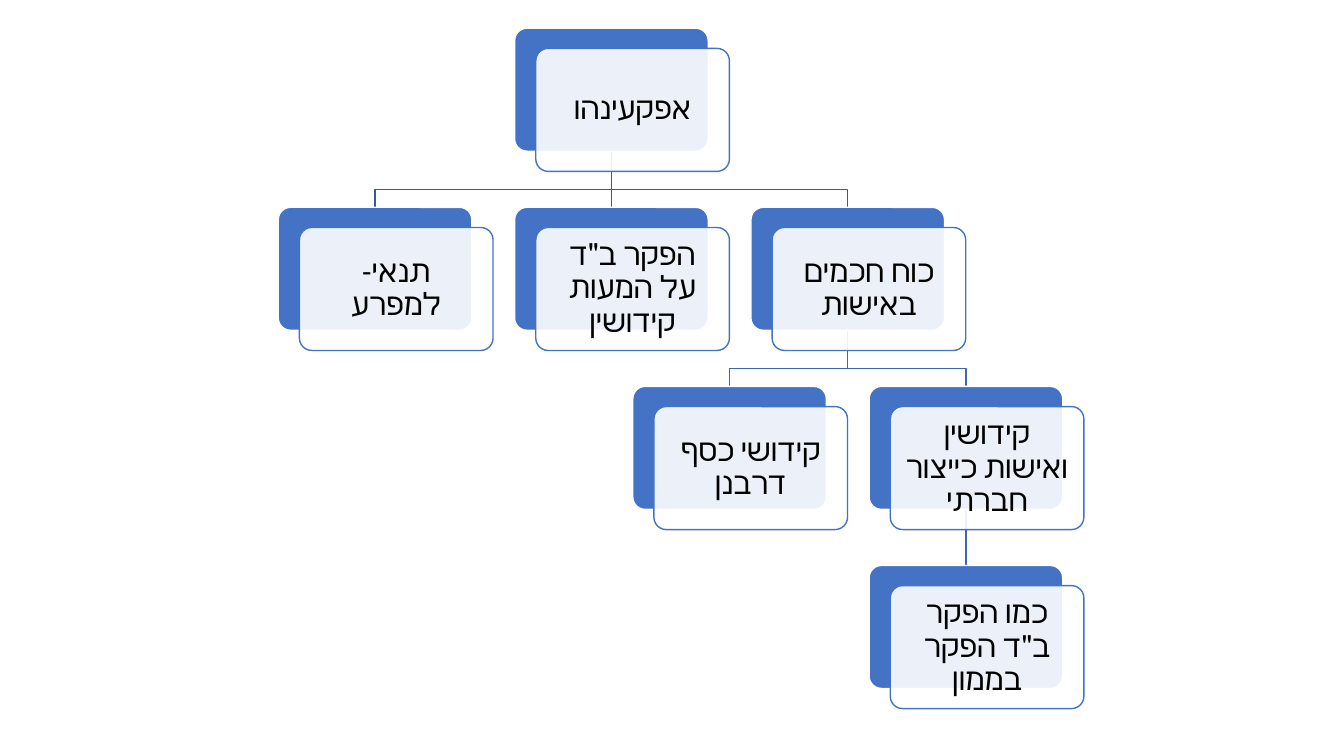
from dataclasses import dataclass

from lxml.etree import SubElement
from pptx import Presentation
from pptx.dml.color import RGBColor
from pptx.enum.shapes import MSO_CONNECTOR as Connector, MSO_SHAPE as Shape
from pptx.enum.text import MSO_ANCHOR as Anchor, PP_ALIGN as Align
from pptx.oxml.ns import qn
from pptx.util import Inches, Pt


@dataclass(frozen=True)
class Theme:
    """Colours, type and line sizes of the slide."""
    accent: str = "4472C4"
    paper: str = "FFFFFF"
    ink: str = "000000"
    links: tuple = ("365B9D", "3E67B2", "3E67B2")
    font: str = "Calibri"
    size: int = 22
    line: int = 1
    opacity: int = 90


@dataclass(frozen=True)
class Node:
    """One card: its wording, grid place and parent."""
    text: str
    column: int
    row: int
    parent: str = ""


THEME = Theme()
CARD_WIDTH, CARD_HEIGHT = 1.92, 1.22
SHIFT_X, SHIFT_Y = 0.21, 0.2
BEND = 0.68
TREE_BOX = (2.76, 0.28, 7.99, 6.75)
COLUMN_STEPS, ROW_STEPS = 5, 3
TREE = {
    "root": Node("אפקעינהו", 2, 0),
    "condition": Node("תנאי- למפרע", 0, 1, "root"),
    "money": Node("הפקר ב״ד על המעות קידושין", 2, 1, "root"),
    "sages": Node("כוח חכמים באישות", 4, 1, "root"),
    "silver": Node("קידושי כסף דרבנן", 3, 2, "sages"),
    "social": Node("קידושין ואישות כייצור חברתי", 5, 2, "sages"),
    "property": Node("כמו הפקר ב״ד הפקר בממון", 5, 3, "social"),
}


def color(code):
    """Turn a hex code into a colour."""
    return RGBColor.from_string(code)


def style_line(line, code):
    """Give a line its colour and width."""
    line.color.rgb = color(code)
    line.width = Pt(THEME.line)


def add_panel(slide, left, top, fill, border):
    """Draw one rounded panel of a card."""
    panel = slide.shapes.add_shape(
        Shape.ROUNDED_RECTANGLE, Inches(left), Inches(top),
        Inches(CARD_WIDTH), Inches(CARD_HEIGHT))
    panel.adjustments[0] = 0.1
    panel.shadow.inherit = False
    panel.fill.solid()
    panel.fill.fore_color.rgb = color(fill)
    style_line(panel.line, border)
    return panel


def write_label(panel, text):
    """Write centred right-to-left text in a panel."""
    frame = panel.text_frame
    inset = Inches(0.12)
    layout = {"word_wrap": True, "vertical_anchor": Anchor.MIDDLE,
              "margin_left": inset, "margin_right": inset,
              "margin_top": inset, "margin_bottom": inset}
    for name, value in layout.items():
        setattr(frame, name, value)
    label = frame.paragraphs[0]
    label.alignment = Align.CENTER
    label.line_spacing = 0.9
    label._p.get_or_add_pPr().set("rtl", "1")
    words = label.add_run()
    words.text = text
    words.font.name = THEME.font
    words.font.size = Pt(THEME.size)
    words.font.color.rgb = color(THEME.ink)
    SubElement(words.font._element, qn("a:cs")).set("typeface", THEME.font)


def add_card(slide, left, top, text):
    """Draw a solid panel with a translucent labelled one over it."""
    add_panel(slide, left, top, THEME.accent, THEME.paper)
    front = add_panel(slide, left + SHIFT_X, top + SHIFT_Y, THEME.paper, THEME.accent)
    tint = front.fill._xPr.find(qn("a:solidFill"))[0]
    SubElement(tint, qn("a:alpha")).set("val", str(THEME.opacity * 1000))
    write_label(front, text)


def add_link(slide, parent, child, code):
    """Join the bottom of a parent card to the top of its child."""
    start_x, end_x = (Inches(left + CARD_WIDTH / 2) for left, top in (parent, child))
    start_y, end_y = Inches(parent[1] + CARD_HEIGHT), Inches(child[1])
    if start_x == end_x:
        link = slide.shapes.add_connector(
            Connector.STRAIGHT, start_x, start_y, end_x, end_y)
        SubElement(link._element.spPr, qn("a:effectLst"))
    else:
        bend_y = round(start_y + BEND * (end_y - start_y))
        outline = slide.shapes.build_freeform(start_x, start_y)
        outline.add_line_segments(
            [(start_x, bend_y), (end_x, bend_y), (end_x, end_y)], close=False)
        link = outline.convert_to_shape()
        link.fill.background()
        link.shadow.inherit = False
    style_line(link.line, code)


def add_tree(slide, box, nodes):
    """Lay the cards on a grid within the box, links behind them."""
    left, top, width, height = box
    column = (width - CARD_WIDTH - SHIFT_X) / COLUMN_STEPS
    row = (height - CARD_HEIGHT - SHIFT_Y) / ROW_STEPS
    places = {key: (left + node.column * column, top + node.row * row)
              for key, node in nodes.items()}
    for key, node in reversed(nodes.items()):
        if node.parent:
            add_link(slide, places[node.parent], places[key], THEME.links[node.row - 1])
    for key, node in nodes.items():
        add_card(slide, *places[key], node.text)


def main():
    """Build and save the slide."""
    deck = Presentation()
    deck.slide_width, deck.slide_height = Inches(13.33), Inches(7.5)
    slide = deck.slides.add_slide(deck.slide_layouts[6])
    add_tree(slide, TREE_BOX, TREE)
    deck.save("out.pptx")


if __name__ == "__main__":
    main()
